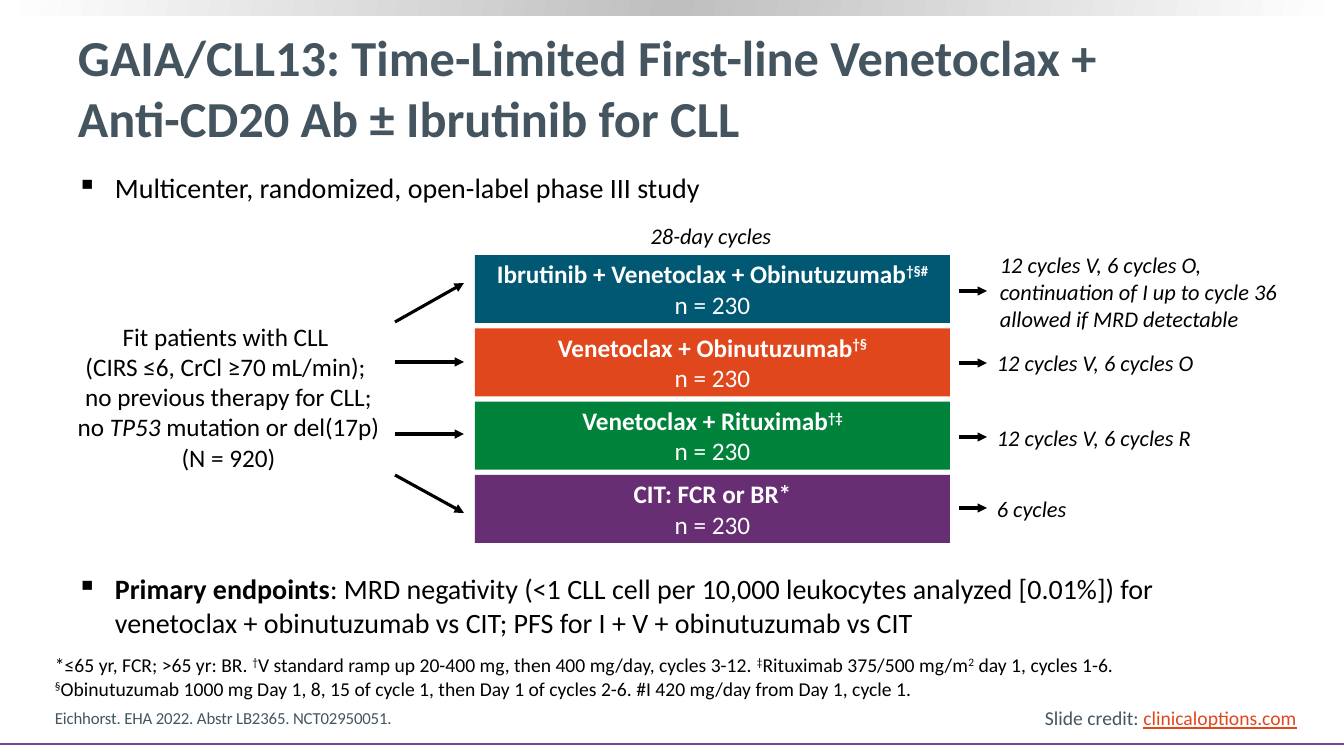
from lxml import etree
from pptx import Presentation
from pptx.dml.color import RGBColor
from pptx.enum.shapes import MSO_CONNECTOR, MSO_SHAPE
from pptx.enum.text import MSO_ANCHOR, PP_ALIGN
from pptx.oxml.ns import qn
from pptx.util import Pt

LEFT, CENTER = PP_ALIGN.LEFT, PP_ALIGN.CENTER
TOP, MIDDLE, BOTTOM = MSO_ANCHOR.TOP, MSO_ANCHOR.MIDDLE, MSO_ANCHOR.BOTTOM
RECTANGLE, STRAIGHT = MSO_SHAPE.RECTANGLE, MSO_CONNECTOR.STRAIGHT

# Content: a paragraph is a list of (text, marks); b bold, i italic, ^ superscript, u link look
FONT = "Calibri"
COLORS = {
    "text": "000000", "slate": "455560", "white": "FFFFFF", "silver": "BFBFBF",
    "blue": "015873", "orange": "E1471D", "green": "00823B", "violet": "682E74",
    "rule": "7F3F98",
}
TITLE = [[("GAIA/CLL13: Time-Limited First-line Venetoclax +\n"
           "Anti-CD20 Ab ± Ibrutinib for CLL", "b")]]
DESIGN = [[("Multicenter, randomized, open-label phase III study", "")]]
ENDPOINTS = [[
    ("Primary endpoints", "b"),
    (": MRD negativity (<1 CLL cell per 10,000 leukocytes analyzed [0.01%]) for "
     "venetoclax + obinutuzumab vs CIT; PFS for I + V + obinutuzumab vs CIT", ""),
]]
PATIENTS = [
    [("Fit patients with CLL ", "")],
    [("(CIRS ≤6, CrCl ≥70 mL/min); ", "")],
    [("no previous therapy for CLL; no ", ""), ("TP53", "i"),
     (" mutation or del(17p)\n(N = 920)", "")],
]
CYCLE_LENGTH = [[("28-day cycles", "i")]]
ARM_SIZE = "n = 230"
# Regimen, footnote marks, colour, start and end height of the arrow into the arm
ARMS = [
    ("Ibrutinib + Venetoclax + Obinutuzumab", "†§#", "blue", 322, 283),
    ("Venetoclax + Obinutuzumab", "†§", "orange", 362, 362),
    ("Venetoclax + Rituximab", "†‡", "green", 434, 434),
    ("CIT: FCR or BR*", "", "violet", 475, 513),
]
# Schedule, text box, height of the arrow leading to it
SCHEDULES = [
    ("12 cycles V, 6 cycles O,\ncontinuation of I up to cycle 36\nallowed if MRD detectable",
     (990, 246, 306, 92), 291),
    ("12 cycles V, 6 cycles O", (987, 344, 219, 37), 363),
    ("12 cycles V, 6 cycles R", (987, 419, 217, 37), 437),
    ("6 cycles", (987, 490, 92, 37), 508),
]
FOOTNOTES = [[
    ("*≤65 yr, FCR; >65 yr: BR. ", ""), ("†", "^"),
    ("V standard ramp up 20-400 mg, then 400 mg/day, cycles 3-12. ", ""), ("‡", "^"),
    ("Rituximab 375/500 mg/m", ""), ("2", "^"), (" day 1, cycles 1-6. ", ""), ("§", "^"),
    ("Obinutuzumab 1000 mg Day 1, 8, 15 of cycle 1, then Day 1 of cycles 2-6. "
     "#I 420 mg/day from Day 1, cycle 1.", ""),
]]
CITATION = [[("Eichhorst. EHA 2022. Abstr LB2365. NCT02950051.", "")]]
CREDIT = [[("Slide credit: ", ""), ("clinicaloptions.com", "u")]]

# Geometry in px
SLIDE_W, SLIDE_H = 1344, 756
EMU_PER_PX = 12192000 / SLIDE_W
ARM_X, ARM_W, ARM_H = 475, 475, 68
ARM_TOP, ARM_LAST_TOP = 255, 475
ARM_PITCH = (ARM_LAST_TOP - ARM_TOP) / (len(ARMS) - 1)
INTO_ARM = (395, 464)
OUT_OF_ARM = (959, 987)
BULLET_INDENT = 38


def px(length):
    return round(length * EMU_PER_PX)


def rgb(name):
    return RGBColor.from_string(COLORS[name])


def write(shape, paragraphs, size, color="text", align=LEFT, anchor=TOP, wrap=True, bullet=None):
    frame = shape.text_frame
    frame.word_wrap = wrap
    frame.vertical_anchor = anchor
    for index, parts in enumerate(paragraphs):
        paragraph = frame.add_paragraph() if index else frame.paragraphs[0]
        paragraph.alignment = align
        if bullet:
            properties = paragraph._p.get_or_add_pPr()
            properties.set("marL", str(px(BULLET_INDENT)))
            properties.set("indent", str(-px(BULLET_INDENT)))
            etree.SubElement(properties, qn("a:buChar")).set("char", bullet)
        for text, marks in parts:
            for line_index, line in enumerate(text.split("\n")):
                if line_index:
                    paragraph.add_line_break()
                run = paragraph.add_run()
                run.text = line
                font = run.font
                font.name, font.size = FONT, Pt(size)
                font.bold, font.italic, font.underline = "b" in marks, "i" in marks, "u" in marks
                font.color.rgb = rgb("orange" if "u" in marks else color)
                if "^" in marks:
                    run._r.get_or_add_rPr().set("baseline", "30000")
    return shape


def text_box(box, paragraphs, size, **options):
    return write(slide.shapes.add_textbox(*map(px, box)), paragraphs, size, **options)


def block(box):
    shape = slide.shapes.add_shape(RECTANGLE, *map(px, box))
    shape.shadow.inherit = False
    shape.line.fill.background()
    return shape


def line(x1, y1, x2, y2, color="text", width=2.25, arrow=True):
    connector = slide.shapes.add_connector(STRAIGHT, px(x1), px(y1), px(x2), px(y2))
    connector.line.color.rgb = rgb(color)
    connector.line.width = Pt(width)
    if arrow:
        etree.SubElement(connector.line._get_or_add_ln(), qn("a:tailEnd")).set("type", "triangle")
    etree.SubElement(connector._element.spPr, qn("a:effectLst"))


presentation = Presentation()
presentation.slide_width, presentation.slide_height = px(SLIDE_W), px(SLIDE_H)
slide = presentation.slides.add_slide(presentation.slide_layouts[6])

# Top band with a three-stop gradient, and bottom rule
band = block((0, 0, SLIDE_W, 16))
band.fill.gradient()
gradient = band._element.spPr.find(qn("a:gradFill"))
stops = gradient.find(qn("a:gsLst"))
for stop in list(stops):
    stops.remove(stop)
for position, name in ((0, "white"), (50000, "silver"), (100000, "white")):
    stop = etree.SubElement(stops, qn("a:gs"))
    stop.set("pos", str(position))
    etree.SubElement(stop, qn("a:srgbClr")).set("val", COLORS[name])
gradient.find(qn("a:lin")).set("ang", str(190 * 60000))
line(0, 744, SLIDE_W, 744, color="rule", width=1.5, arrow=False)

# Title and bullets
text_box((68, 26, 1199, 122), TITLE, 36, color="slate", anchor=MIDDLE)
text_box((67, 166, 1200, 513), DESIGN, 20, bullet="▪")
text_box((67, 567, 1200, 79), ENDPOINTS, 20, bullet="▪")

# Study scheme: patients, arms and schedules
text_box((64, 316, 329, 163), PATIENTS, 18, align=CENTER)
text_box((640, 217, 142, 37), CYCLE_LENGTH, 16, align=CENTER, wrap=False)
for index, (regimen, marks, color, start_y, end_y) in enumerate(ARMS):
    arm = block((ARM_X, ARM_TOP + index * ARM_PITCH, ARM_W, ARM_H))
    arm.fill.solid()
    arm.fill.fore_color.rgb = rgb(color)
    heading = [(regimen, "b")] + ([(marks, "b^")] if marks else [])
    write(arm, [heading, [(ARM_SIZE, "")]], 18, color="white",
          align=CENTER, anchor=MIDDLE, wrap=False)
    line(INTO_ARM[0], start_y, INTO_ARM[1], end_y)
for schedule, box, arrow_y in SCHEDULES:
    text_box(box, [[(schedule, "i")]], 16, wrap=False)
    line(OUT_OF_ARM[0], arrow_y, OUT_OF_ARM[1], arrow_y)

# Footer
text_box((45, 648, 1159, 57), FOOTNOTES, 14)
citation = text_box((45, 703, 866, 30), CITATION, 12, color="slate", anchor=BOTTOM)
citation.text_frame.paragraphs[0].runs[0]._r.get_or_add_rPr().set("spc", "-10")
text_box((1035, 701, 274, 34), CREDIT, 14, color="slate", wrap=False)

presentation.save("out.pptx")
